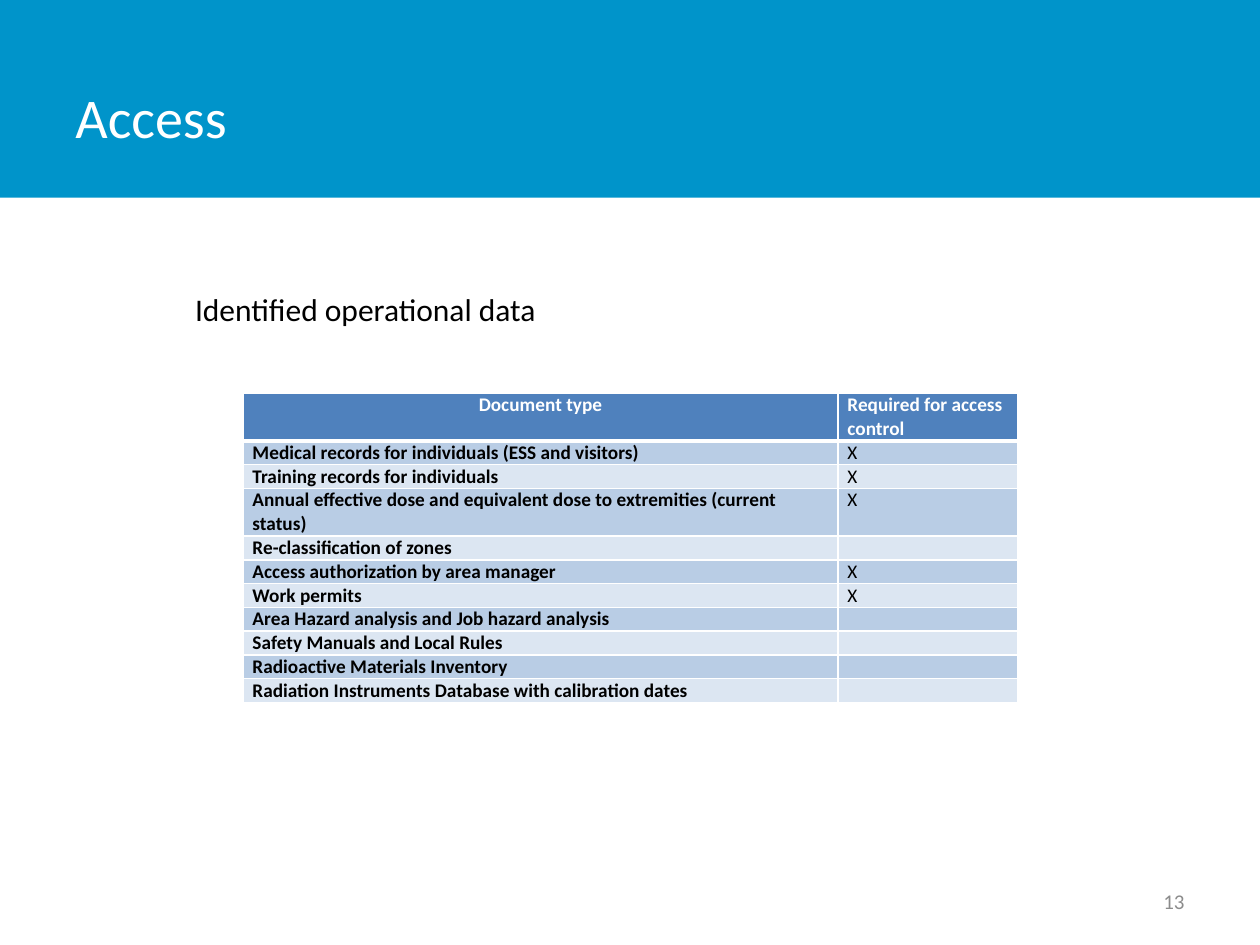
"""Build the Access slide: which operational documents access control requires."""
import dataclasses

import lxml.etree
import pptx
import pptx.dml.color
import pptx.enum.shapes
import pptx.enum.text
import pptx.oxml.ns
import pptx.util

Pt = pptx.util.Pt
RGB = pptx.dml.color.RGBColor.from_string
qn = pptx.oxml.ns.qn
Align = pptx.enum.text.PP_ALIGN
Anchor = pptx.enum.text.MSO_ANCHOR


@dataclasses.dataclass(frozen=True)
class Theme:
    font: str = "Calibri"
    banner: str = "0094CA"
    head: str = "4F81BD"
    bands: tuple = ("B9CDE5", "DCE6F2")
    white: str = "FFFFFF"
    black: str = "000000"
    gray: str = "8C8C8C"
    title: int = 32
    body: int = 18
    note: int = 12
    cell: int = 11


theme = Theme()


def write(frame, text, size, color, bold=False, align=Align.LEFT):
    para = frame.paragraphs[0]
    para.alignment = align
    if text:
        run = para.add_run()
        run.text = text
        run.font.name = theme.font
        run.font.size = Pt(size)
        run.font.bold = bold
        run.font.color.rgb = RGB(color)
    else:
        end = lxml.etree.SubElement(para._p, qn("a:endParaRPr"))
        end.set("sz", str(size * 100))


def border(cell, widths):
    props = cell._tc.get_or_add_tcPr()
    for side, width in zip("LRTB", widths):
        line = lxml.etree.SubElement(props, qn(f"a:ln{side}"), w=str(Pt(width)))
        fill = lxml.etree.SubElement(line, qn("a:solidFill"))
        lxml.etree.SubElement(fill, qn("a:srgbClr"), val=theme.white)


deck = pptx.Presentation()
deck.slide_width, deck.slide_height = Pt(720), Pt(540)
slide = deck.slides.add_slide(deck.slide_layouts[6])
shapes = slide.shapes

banner = shapes.add_shape(pptx.enum.shapes.MSO_SHAPE.RECTANGLE, 0, 0, Pt(720), Pt(113))
banner.shadow.inherit = False
banner.fill.solid()
banner.fill.fore_color.rgb = RGB(theme.banner)
banner.line.fill.background()

labels = [
    ("13", (516.25, 500.5, 167.75, 28.75), theme.note, theme.gray, Align.RIGHT, Anchor.MIDDLE, True),
    ("Access", (36, 21.6, 562.3, 90), theme.title, theme.white, Align.LEFT, Anchor.MIDDLE, True),
    ("Identified operational data", (104.4, 162, 211.7, 29), theme.body, theme.black,
     Align.LEFT, Anchor.TOP, False),
]
for text, place, size, color, align, anchor, wrap in labels:
    frame = shapes.add_textbox(*map(Pt, place)).text_frame
    frame.word_wrap = wrap
    frame.vertical_anchor = anchor
    write(frame, text, size, color, align=align)

rows = [
    ("Document type", "Required for access control"),
    ("Medical records for individuals (ESS and visitors)", "X"),
    ("Training records for individuals", "X"),
    ("Annual effective dose and equivalent dose to extremities (current status)", "X"),
    ("Re-classification of zones", ""),
    ("Access authorization by area manager", "X"),
    ("Work permits", "X"),
    ("Area Hazard analysis and Job hazard analysis", ""),
    ("Safety Manuals and Local Rules", ""),
    ("Radioactive Materials Inventory", ""),
    ("Radiation Instruments Database with calibration dates", ""),
]
single = 13.6
tall = (0, 3)
widths = (340, 102.7)
height = single * (len(rows) + len(tall))
grid = shapes.add_table(len(rows), len(widths), Pt(138.9), Pt(224.8),
                        Pt(sum(widths)), Pt(height)).table
for col, width in zip(grid.columns, widths):
    col.width = Pt(width)

for r, row in enumerate(rows):
    head = r == 0
    grid.rows[r].height = Pt(single * (2 if r in tall else 1))
    for c, text in enumerate(row):
        cell = grid.cell(r, c)
        cell.margin_left = cell.margin_right = Pt(5.4)
        cell.margin_top = cell.margin_bottom = 0
        border(cell, (1, 1, 3 if r == 1 else 1, 3 if head else 1))
        cell.fill.solid()
        cell.fill.fore_color.rgb = RGB(theme.head if head else theme.bands[(r - 1) % 2])
        write(cell.text_frame, text, theme.cell, theme.white if head else theme.black,
              bold=head or c == 0, align=Align.CENTER if head and c == 0 else Align.LEFT)

deck.save("out.pptx")
